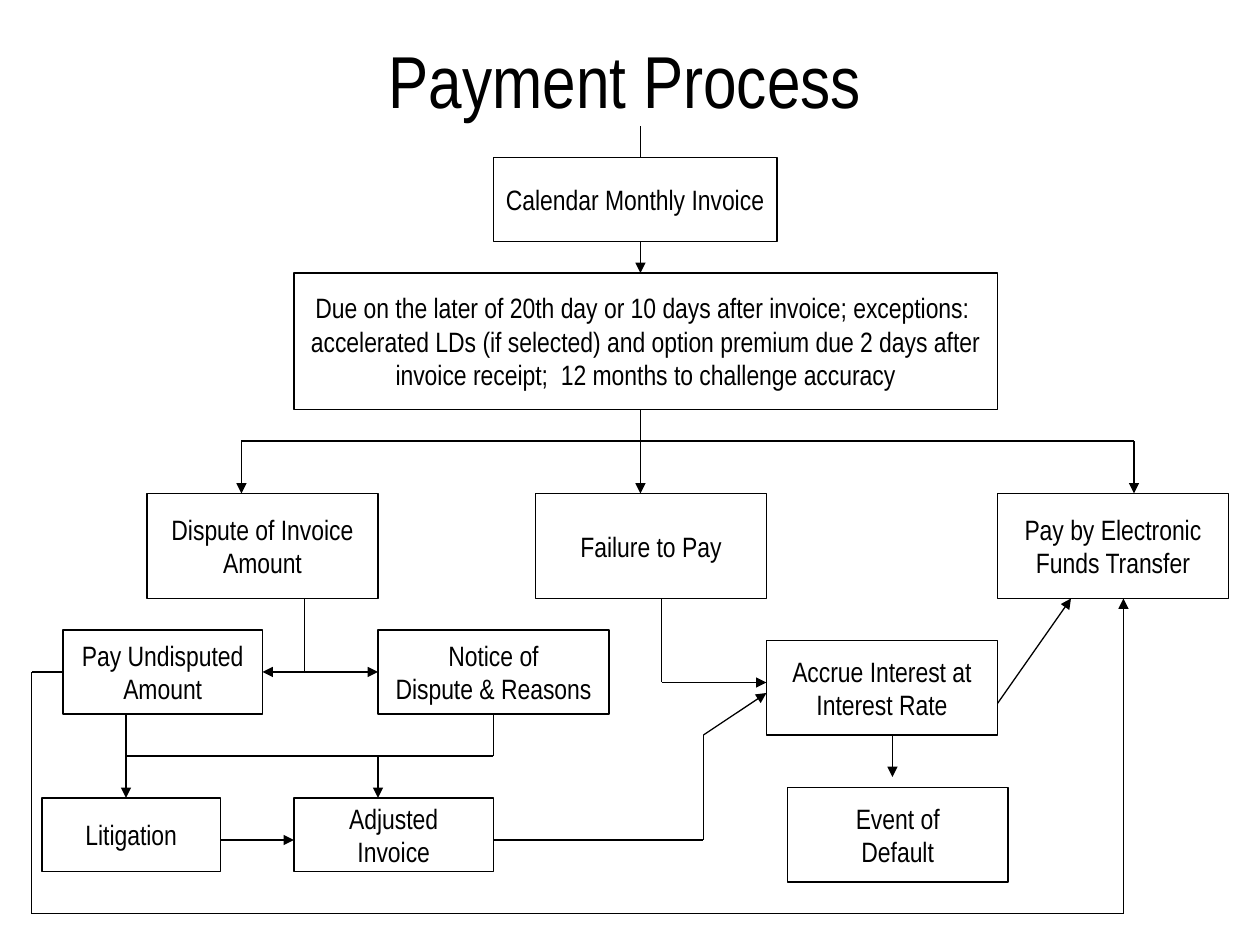
from dataclasses import dataclass
from itertools import pairwise

from lxml.etree import SubElement
from pptx import Presentation
from pptx.dml.color import RGBColor
from pptx.enum.shapes import MSO_CONNECTOR, MSO_SHAPE
from pptx.enum.text import MSO_ANCHOR, PP_ALIGN
from pptx.oxml.ns import qn
from pptx.util import Pt


@dataclass(frozen=True)
class Theme:
    ink: RGBColor = RGBColor(0, 0, 0)
    paper: RGBColor = RGBColor(255, 255, 255)
    font: str = "Arial Narrow"
    title_size: int = 42
    body_size: int = 16
    line_width: float = 0.75


THEME = Theme()
TOP, LEFT, BOTTOM, RIGHT = range(4)

BOXES = {
    "invoice": (282, 90, 162, 48, ["Calendar Monthly Invoice"]),
    "due": (168, 156, 402, 78, [
        "Due on the later of 20th day or 10 days after invoice; exceptions:  "
        "accelerated LDs (if selected) and option premium due 2 days after "
        "invoice receipt;  12 months to challenge accuracy"]),
    "dispute": (84, 282, 132, 60, ["Dispute of Invoice", "Amount"]),
    "failure": (306, 282, 132, 60, ["Failure to Pay"]),
    "transfer": (570, 282, 132, 60, ["Pay by Electronic", "Funds Transfer"]),
    "notice": (216, 360, 132, 48, ["Notice of", "Dispute & Reasons"]),
    "undisputed": (36, 360, 114, 48, ["Pay Undisputed", "Amount"]),
    "litigation": (24, 456, 102, 42, ["Litigation"]),
    "adjusted": (168, 456, 114, 42, ["Adjusted", "Invoice"]),
    "accrue": (438, 366, 132, 54, ["Accrue Interest at", "Interest Rate"]),
    "default": (450, 450, 126, 54, ["Event of", "Default"]),
}

PLAIN_ROUTES = [
    [(366, 72), (366, 90)],
    [(174, 342), (174, 384)],
    [(72, 432), (216, 432)],
]

ARROW_ROUTES = [
    [(366, 138), (366, 156)],
    [(366, 234), (366, 282)],
    [(366, 252), (138, 252), (138, 282)],
    [(366, 252), (648, 252), (648, 282)],
    [(72, 408), (72, 456)],
    [(216, 432), (216, 456)],
    [(126, 480), (168, 480)],
    [(378, 342), (378, 390), (438, 390)],
    [(510, 420), (510, 444)],
    [(282, 480), (402, 480), (402, 420), (438, 396)],
    [(570, 402), (612, 342)],
]


def add_box(page, left, top, width, height, lines, wrap=False, align=PP_ALIGN.CENTER):
    """Draw an outlined box with one paragraph per line of text."""
    box = page.shapes.add_shape(
        MSO_SHAPE.RECTANGLE, Pt(left), Pt(top), Pt(width), Pt(height))
    box.shadow.inherit = False
    box.fill.solid()
    box.fill.fore_color.rgb = THEME.paper
    box.line.color.rgb = THEME.ink
    box.line.width = Pt(THEME.line_width)
    write_text(box.text_frame, lines, THEME.body_size, wrap, align)
    return box


def write_text(frame, lines, size, wrap=False, align=PP_ALIGN.CENTER):
    """Fill a text frame with styled, vertically centred paragraphs."""
    frame.word_wrap = wrap
    frame.vertical_anchor = MSO_ANCHOR.MIDDLE
    for index, line in enumerate(lines):
        para = frame.add_paragraph() if index else frame.paragraphs[0]
        para.alignment = align
        span = para.add_run()
        span.text = line
        span.font.name = THEME.font
        span.font.size = Pt(size)
        span.font.color.rgb = THEME.ink


def add_title(page, text):
    """Place the slide title above the flow."""
    box = page.shapes.add_textbox(Pt(201), Pt(18), Pt(312), Pt(54))
    write_text(box.text_frame, [text], THEME.title_size)


def add_line(page, start, finish, arrow=False):
    """Draw one straight line, with an arrowhead at its end if asked."""
    line = page.shapes.add_connector(
        MSO_CONNECTOR.STRAIGHT, *(Pt(value) for value in (*start, *finish)))
    line.line.color.rgb = THEME.ink
    line.line.width = Pt(THEME.line_width)
    if arrow:
        SubElement(line.line._get_or_add_ln(), qn("a:tailEnd"), type="triangle")
    SubElement(line._element.spPr, qn("a:effectLst"))
    return line


def add_route(page, points, arrow=False):
    """Draw a chain of lines, with any arrowhead on the last one."""
    legs = list(pairwise(points))
    return [add_line(page, *leg, arrow=arrow and leg == legs[-1]) for leg in legs]


def add_joined_routes(page, boxes):
    """Draw the routes that are joined to the middle of a box side."""
    for name, side, point in (("undisputed", RIGHT, (150, 384)),
                              ("notice", LEFT, (216, 384))):
        arrow = add_line(page, (174, 384), point, arrow=True)
        arrow.end_connect(boxes[name], side)
    bypass = add_route(
        page, [(36, 384), (18, 384), (18, 522), (642, 522), (642, 342)], arrow=True)
    bypass[0].begin_connect(boxes["undisputed"], LEFT)
    notice_route = add_route(page, [(282, 408), (282, 432), (216, 432)])
    notice_route[0].begin_connect(boxes["notice"], BOTTOM)


def main():
    """Build the payment process slide and save it."""
    deck = Presentation()
    deck.slide_width, deck.slide_height = Pt(720), Pt(540)
    page = deck.slides.add_slide(deck.slide_layouts[6])
    add_title(page, "Payment Process")
    boxes = {}
    for name, content in BOXES.items():
        align = PP_ALIGN.LEFT if name == "invoice" else PP_ALIGN.CENTER
        boxes[name] = add_box(page, *content, wrap=name == "due", align=align)
    for points in PLAIN_ROUTES:
        add_route(page, points)
    for points in ARROW_ROUTES:
        add_route(page, points, arrow=True)
    add_joined_routes(page, boxes)
    deck.save("out.pptx")


if __name__ == "__main__":
    main()
